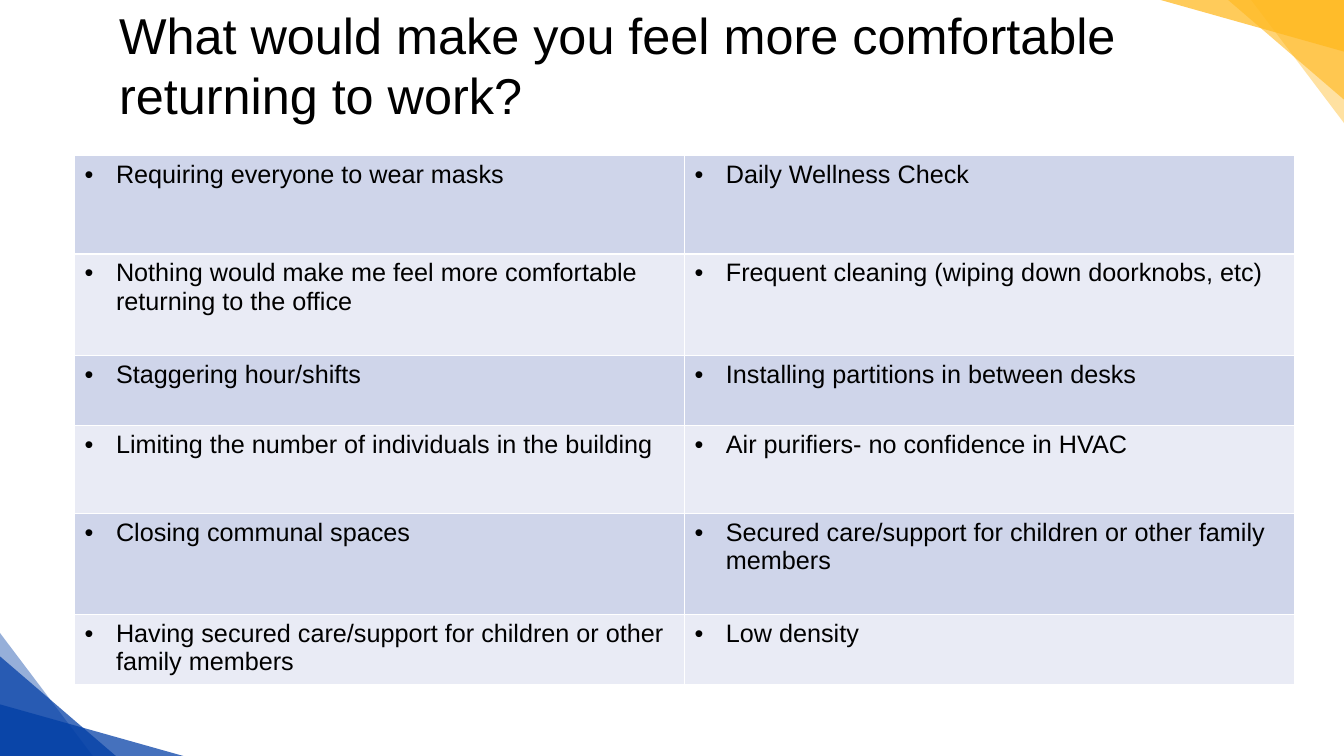
"""Build the slide on what would make staff comfortable returning to work."""
import pptx
import pptx.dml.color
import pptx.enum.shapes
import pptx.enum.text
import pptx.oxml
import pptx.oxml.ns
import pptx.util
from lxml import etree

Cm = pptx.util.Cm
FONT = "Arial"
COLOURS = {
    "text": "000000",
    "blue": "003DA5",
    "gold": "FFB81D",
    "border": "FFFFFF",
    "odd_row": "CFD5EA",
    "even_row": "E9EBF5",
}
SLIDE_WIDTH, SLIDE_HEIGHT = 33.87, 19.05
CORNER_TRIANGLES = [(2.34, 3.1, 41, 41), (2.92, 2.51, 73, 61), (4.62, 1.3, 73, 73)]
TITLE_LINES = ["What would make you feel more comfortable", "returning to work?"]
HEADER_HEIGHT = 1.06
ANSWERS = [
    (2.49, "Requiring everyone to wear masks", "Daily Wellness Check"),
    (2.55, "Nothing would make me feel more comfortable returning to the office",
     "Frequent cleaning (wiping down doorknobs, etc)"),
    (1.77, "Staggering hour/shifts", "Installing partitions in between desks"),
    (2.22, "Limiting the number of individuals in the building",
     "Air purifiers- no confidence in HVAC"),
    (2.55, "Closing communal spaces",
     "Secured care/support for children or other family members"),
    (1.77, "Having secured care/support for children or other family members",
     "Low density"),
]


def colour(name):
    return pptx.dml.color.RGBColor.from_string(COLOURS[name])


def add_run(paragraph, text, size):
    run = paragraph.add_run()
    run.text = text
    run.font.name = FONT
    run.font.size = pptx.util.Pt(size)
    run.font.color.rgb = colour("text")


def add_title(slide):
    title = slide.shapes.title
    title.left, title.top, title.width, title.height = Cm(3), Cm(0.1), Cm(30.87), Cm(3.07)
    frame = title.text_frame
    frame.margin_left = frame.margin_top = frame.margin_right = frame.margin_bottom = 0
    frame.vertical_anchor = pptx.enum.text.MSO_ANCHOR.TOP
    for index, line in enumerate(TITLE_LINES):
        paragraph = frame.add_paragraph() if index else frame.paragraphs[0]
        paragraph.alignment = pptx.enum.text.PP_ALIGN.LEFT
        paragraph.line_spacing = 1.0
        paragraph.space_before = pptx.util.Pt(0)
        add_run(paragraph, line, 36)


def add_triangle(slide, left, top, width, height, fill, opacity, rotation):
    shape = slide.shapes.add_shape(
        pptx.enum.shapes.MSO_SHAPE.RIGHT_TRIANGLE, Cm(left), Cm(top), Cm(width), Cm(height))
    shape.rotation = rotation
    shape.shadow.inherit = False
    shape.line.fill.background()
    shape.fill.solid()
    shape.fill.fore_color.rgb = colour(fill)
    srgb = shape.fill._xPr.find(".//" + pptx.oxml.ns.qn("a:srgbClr"))
    etree.SubElement(srgb, pptx.oxml.ns.qn("a:alpha"), val=str(opacity * 1000))


def add_corners(slide):
    for width, height, blue_opacity, gold_opacity in CORNER_TRIANGLES:
        add_triangle(slide, 0, SLIDE_HEIGHT - height, width, height, "blue", blue_opacity, 0)
        add_triangle(slide, SLIDE_WIDTH - width, 0, width, height, "gold", gold_opacity, 180)


def add_borders(cell, visible_sides):
    properties = cell._tc.get_or_add_tcPr()
    line = f'<a:solidFill><a:srgbClr val="{COLOURS["border"]}"/></a:solidFill>'
    for side in "LRTB":
        paint = line if side in visible_sides else "<a:noFill/>"
        properties.append(pptx.oxml.parse_xml(
            f'<a:ln{side} {pptx.oxml.ns.nsdecls("a")} w="{pptx.util.Pt(1)}">{paint}</a:ln{side}>'))


def add_bullet(paragraph):
    properties = paragraph._p.get_or_add_pPr()
    properties.set("marL", str(Cm(0.79)))
    properties.set("indent", str(-Cm(0.79)))
    etree.SubElement(properties, pptx.oxml.ns.qn("a:buFont"), typeface=FONT)
    etree.SubElement(properties, pptx.oxml.ns.qn("a:buChar"), char="•")


def fill_answer(cell, text, fill):
    add_borders(cell, "LRTB")
    cell.fill.solid()
    cell.fill.fore_color.rgb = colour(fill)
    paragraph = cell.text_frame.paragraphs[0]
    add_bullet(paragraph)
    add_run(paragraph, text, 18)


def add_answer_table(slide):
    height = HEADER_HEIGHT + sum(answer[0] for answer in ANSWERS)
    table = slide.shapes.add_table(
        len(ANSWERS) + 1, 2, Cm(1.88), Cm(2.85), Cm(30.74), Cm(height)).table
    table.first_row = table.horz_banding = False
    table.rows[0].height = Cm(HEADER_HEIGHT)
    for cell in table.rows[0].cells:
        add_borders(cell, "B")
        cell.fill.background()
    for index, (row_height, *texts) in enumerate(ANSWERS, start=1):
        row = table.rows[index]
        row.height = Cm(row_height)
        for cell, text in zip(row.cells, texts):
            fill_answer(cell, text, "odd_row" if index % 2 else "even_row")


def main():
    presentation = pptx.Presentation()
    presentation.slide_width, presentation.slide_height = Cm(SLIDE_WIDTH), Cm(SLIDE_HEIGHT)
    slide = presentation.slides.add_slide(presentation.slide_layouts[5])
    add_corners(slide)
    add_title(slide)
    add_answer_table(slide)
    presentation.save("out.pptx")


if __name__ == "__main__":
    main()
